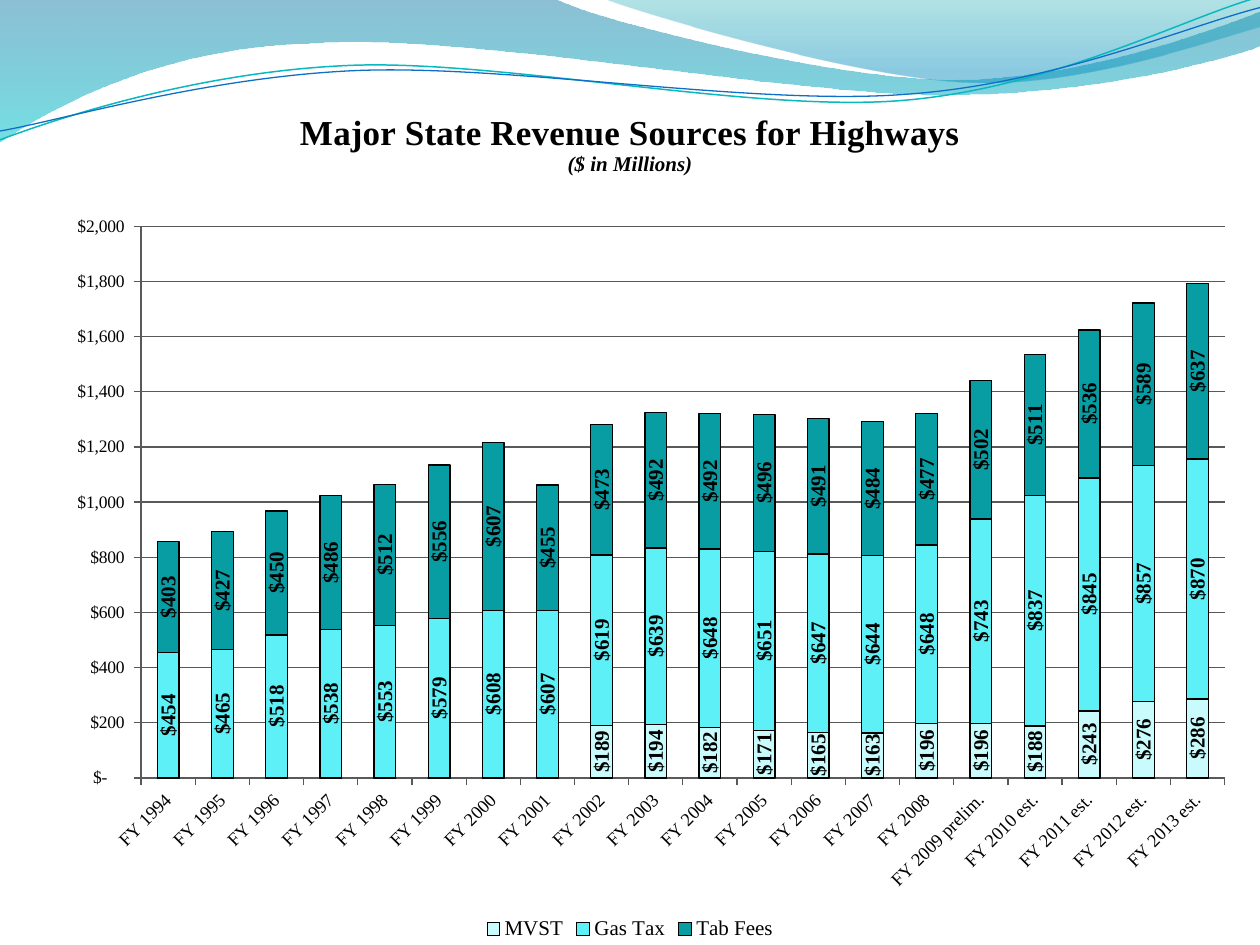
from math import cos, radians, sin

from lxml.etree import SubElement
from pptx import Presentation
from pptx.chart.data import CategoryChartData
from pptx.dml.color import RGBColor
from pptx.enum.chart import XL_CHART_TYPE, XL_LABEL_POSITION, XL_LEGEND_POSITION, XL_TICK_MARK
from pptx.oxml import parse_xml
from pptx.oxml.ns import nsdecls, qn
from pptx.util import Inches, Pt

FONT = "Times New Roman"
BLACK = RGBColor(0, 0, 0)
GRID_GRAY = RGBColor(0x59, 0x59, 0x59)
DEEP_BLUE = RGBColor(0x00, 0x74, 0xA1)
CYAN = RGBColor(0x00, 0xC6, 0xCF)
TEAL = RGBColor(0x00, 0xA1, 0xA9)
SKY_BLUE = RGBColor(0x00, 0x8B, 0xBF)
LINE_TEAL = RGBColor(0x0A, 0xB8, 0xBF)
LINE_BLUE = RGBColor(0x0F, 0x6F, 0xC6)
CURVE_TURN = 357.3

DOLLARS = '_("$"* #,##0_);_("$"* \\(#,##0\\);_("$"* "-"??_);_(@_)'
YEARS = [f"FY {year}" for year in range(1994, 2009)] + ["FY 2009 prelim."] + [
    f"FY {year} est." for year in range(2010, 2014)]
YEARS_WITHOUT_MVST = 8
REVENUES = [
    ("MVST", RGBColor(0xC9, 0xFA, 0xFC),
     [0] * YEARS_WITHOUT_MVST + [189, 194, 182, 171, 165, 163, 196, 196, 188, 243, 276, 286]),
    ("Gas Tax", RGBColor(0x5E, 0xF0, 0xF7),
     [454, 465, 518, 538, 553, 579, 608, 607, 619, 639,
      648, 651, 647, 644, 648, 743, 837, 845, 857, 870]),
    ("Tab Fees", RGBColor(0x08, 0x9C, 0xA3),
     [403, 427, 450, 486, 512, 556, 607, 455, 473, 492,
      492, 496, 491, 484, 477, 502, 511, 536, 589, 637]),
]

WIDE_WAVE = [
    (0, 0), (4.4, -0.01),
    (4.76, 0.17, 6.64, 0.63, 7.58, 0.63), (8.53, 0.63, 9.58, 0.26, 10, 0.09),
    (10.01, 0.36),
    (9.83, 0.44, 8.7, 0.76, 7.46, 0.75), (6.22, 0.75, 3.82, 0.28, 2.57, 0.34),
    (1.29, 0.36, 0.46, 0.83, -0.01, 1.13), (0, 0),
]
RIGHT_WAVE = [
    (4.79, -0.01),
    (5.09, 0.11, 6.82, 0.62, 7.69, 0.65), (8.56, 0.69, 9.61, 0.32, 10, 0.21),
    (10, 0), (4.79, -0.01),
]
TEAL_CURVE = [
    (0, 1.11),
    (0.48, 0.93, 1.58, 0.57, 2.77, 0.52), (3.95, 0.47, 5.93, 0.89, 7.13, 0.8),
    (8.33, 0.71, 9.38, 0.15, 9.98, -0.02),
]
BLUE_CURVE = [
    (0, 1.04),
    (0.47, 0.96, 1.64, 0.61, 2.83, 0.56), (4.03, 0.51, 5.97, 0.84, 7.17, 0.75),
    (8.36, 0.67, 9.41, 0.21, 10, 0.06),
]


def turn_back(x, y, place, rotation):
    left, top, width, height = place
    across, down = x - left - width / 2, y - top - height / 2
    angle = radians(-rotation)
    return (width / 2 + across * cos(angle) - down * sin(angle),
            height / 2 + across * sin(angle) + down * cos(angle))


def add_outline(page, place, outline, rotation=0, close=False):
    left, top, width, height = (Inches(length) for length in place)
    builder = page.shapes.build_freeform(left, top)
    builder.add_line_segments([(left + width, top + height)], close=close)
    shape = builder.convert_to_shape()
    shape.left, shape.top, shape.width, shape.height = left, top, width, height
    shape.rotation = rotation
    shape.shadow.inherit = False
    route = next(shape.element.spPr.iter(qn("a:path")))
    for step in list(route):
        route.remove(step)
    for index, segment in enumerate(outline):
        kind = "a:moveTo" if index == 0 else "a:lnTo" if len(segment) == 2 else "a:cubicBezTo"
        step = SubElement(route, qn(kind))
        for x, y in zip(segment[::2], segment[1::2]):
            x, y = turn_back(x, y, place, rotation)
            point = SubElement(step, qn("a:pt"))
            point.set("x", str(Inches(x)))
            point.set("y", str(Inches(y)))
    if close:
        SubElement(route, qn("a:close"))
    return shape


def add_wave(page, place, outline, stops):
    wave = add_outline(page, place, outline, close=True)
    wave.line.fill.background()
    wave.fill.gradient()
    wave.fill.gradient_angle = 270
    for stop, (position, color, opacity) in zip(wave.fill.gradient_stops, stops):
        stop.position = position
        stop.color.rgb = color
    colors = wave.element.spPr.iter(qn("a:srgbClr"))
    for color, (position, rgb, opacity) in zip(colors, stops):
        SubElement(color, qn("a:alpha")).set("val", str(opacity * 1000))


def add_curve(page, place, outline, color, width):
    curve = add_outline(page, place, outline, CURVE_TURN)
    curve.fill.background()
    curve.line.color.rgb = color
    curve.line.width = Pt(width)


def set_font(font, size, bold=False, italic=False):
    font.name = FONT
    font.size = Pt(size)
    font.bold = bold
    font.italic = italic
    font.color.rgb = BLACK


def rotate_text(element, degrees):
    body = element.find(qn("c:txPr")).find(qn("a:bodyPr"))
    body.set("rot", str(degrees * 60000))
    body.set("vert", "horz")


def set_layout(element, index, **settings):
    for layout in element.findall(qn("c:layout")):
        element.remove(layout)
    layout = parse_xml(f'<c:layout {nsdecls("c")}><c:manualLayout/></c:layout>')
    for name, value in settings.items():
        SubElement(layout[0], qn(f"c:{name}")).set("val", str(value))
    element.insert(index, layout)


def add_title(chart):
    frame = chart.chart_title.text_frame
    frame.text = "Major State Revenue Sources for Highways\n($ in Millions)"
    heading, unit = frame.paragraphs
    set_font(heading.runs[0].font, 20, bold=True)
    set_font(unit.runs[0].font, 12, bold=True, italic=True)
    set_layout(chart.chart_title._element, 1, xMode="edge", yMode="edge", x=0.235, y=0.027)


def style_axes(chart):
    for axis, size in ((chart.category_axis, 10.5), (chart.value_axis, 10)):
        set_font(axis.tick_labels.font, size)
        axis.major_tick_mark = XL_TICK_MARK.OUTSIDE
        axis.minor_tick_mark = XL_TICK_MARK.NONE
        axis.format.line.color.rgb = GRID_GRAY
    rotate_text(chart.category_axis._element, -45)
    values = chart.value_axis
    values.minimum_scale, values.maximum_scale, values.major_unit = 0, 2000, 200
    values.tick_labels.number_format = DOLLARS
    values.tick_labels.number_format_is_linked = False
    values.has_major_gridlines = True
    values.major_gridlines.format.line.color.rgb = GRID_GRAY


def style_series(series, color):
    series.format.fill.solid()
    series.format.fill.fore_color.rgb = color
    series.format.line.color.rgb = BLACK
    series.format.line.width = Pt(0.75)
    labels = series.data_labels
    labels.show_value = True
    labels.position = XL_LABEL_POSITION.CENTER
    labels.number_format = DOLLARS
    labels.number_format_is_linked = False
    set_font(labels.font, 12, bold=True)
    rotate_text(labels._element, -90)


def hide_labels(series, count):
    for index in range(count):
        series.data_labels._element.insert(index, parse_xml(
            f'<c:dLbl {nsdecls("c")}><c:idx val="{index}"/><c:delete val="1"/></c:dLbl>'))


def add_revenue_chart(page):
    data = CategoryChartData(number_format=DOLLARS)
    data.categories = YEARS
    for name, color, values in REVENUES:
        data.add_series(name, values)
    chart = page.shapes.add_chart(XL_CHART_TYPE.COLUMN_STACKED, Inches(0), Inches(0.67),
                                  Inches(10), Inches(6.83), data).chart
    set_font(chart.font, 10)
    add_title(chart)
    style_axes(chart)
    plot = chart.plots[0]
    plot.gap_width, plot.overlap, plot.vary_by_categories = 150, 100, False
    for series, (name, color, values) in zip(plot.series, REVENUES):
        style_series(series, color)
    hide_labels(plot.series[0], YEARS_WITHOUT_MVST)
    chart.has_legend = True
    chart.legend.position = XL_LEGEND_POSITION.BOTTOM
    chart.legend.include_in_layout = False
    set_font(chart.legend.font, 12)
    set_layout(chart._chartSpace.chart.plotArea, 0, layoutTarget="inner",
               xMode="edge", yMode="edge", x=0.112, y=0.165, w=0.86, h=0.641)


def main():
    deck = Presentation()
    deck.slide_width, deck.slide_height = Inches(10), Inches(7.5)
    page = deck.slides.add_slide(deck.slide_layouts[6])
    add_wave(page, (-0.01, -0.01, 10.02, 1.14), WIDE_WAVE, [(0, DEEP_BLUE, 45), (1, CYAN, 55)])
    add_wave(page, (4.79, -0.01, 5.21, 0.7), RIGHT_WAVE, [(0, TEAL, 30), (0.8, SKY_BLUE, 45)])
    add_curve(page, (-0.02, 0.22, 10.02, 0.71), TEAL_CURVE, LINE_TEAL, 0.85)
    add_curve(page, (-0.02, 0.3, 10.03, 0.58), BLUE_CURVE, LINE_BLUE, 0.75)
    add_revenue_chart(page)
    deck.save("out.pptx")


if __name__ == "__main__":
    main()
